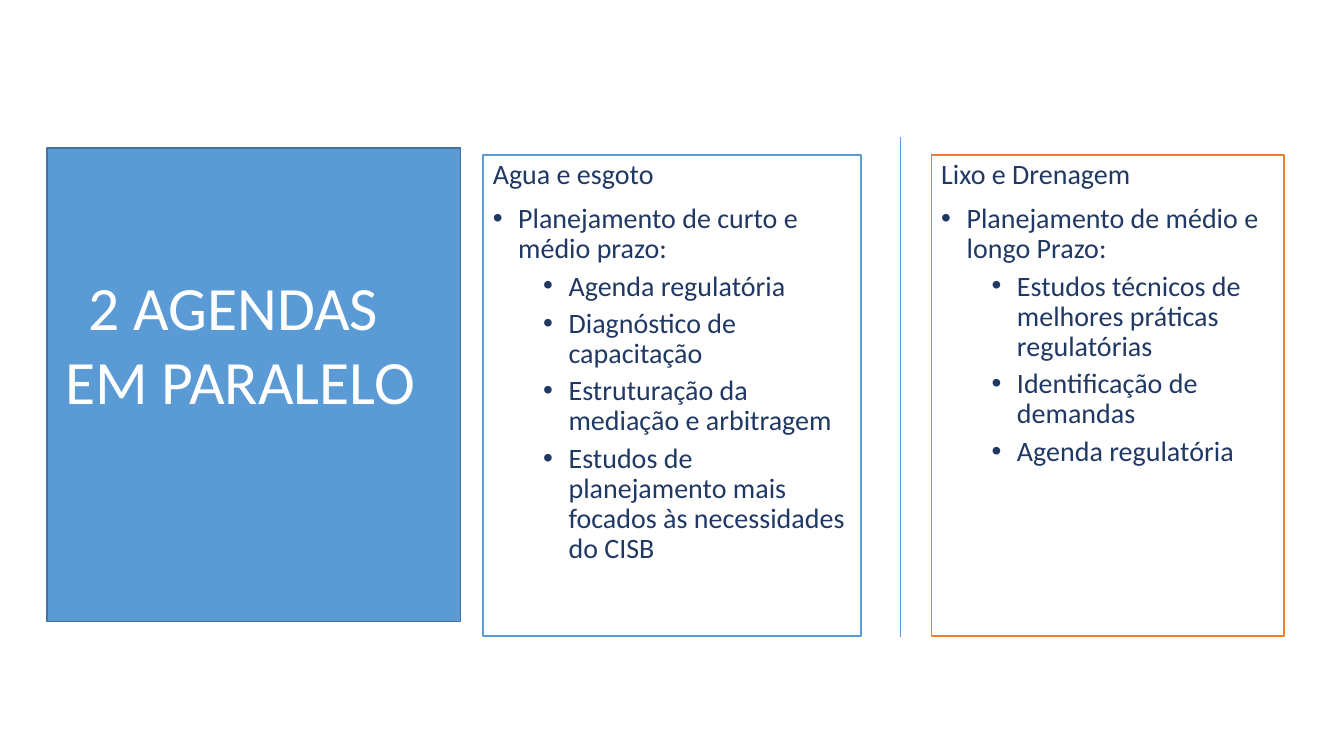
"""Build a slide that sets two parallel agendas side by side."""
from dataclasses import dataclass

from lxml.etree import SubElement
from pptx import Presentation
from pptx.dml.color import RGBColor
from pptx.enum.shapes import MSO_CONNECTOR, MSO_SHAPE
from pptx.enum.text import MSO_ANCHOR, MSO_AUTO_SIZE, PP_ALIGN
from pptx.oxml.ns import qn
from pptx.shapes.autoshape import Shape
from pptx.slide import Slide
from pptx.text.text import _Paragraph as Para
from pptx.util import Cm, Pt

BLUE = RGBColor(0x5B, 0x9B, 0xD5)
EDGE = RGBColor(0x43, 0x73, 0x9E)
NAVY = RGBColor(0x20, 0x38, 0x64)
ORANGE = RGBColor(0xED, 0x7D, 0x31)
WHITE = RGBColor(0xFF, 0xFF, 0xFF)
FONT = "Calibri"
TOP, HEIGHT = 3.91, 12.12


@dataclass(frozen=True)
class Agenda:
    left: float
    width: float
    edge: RGBColor
    head: str
    plan: str
    items: tuple[str, ...]


AGENDAS = (
    Agenda(12.17, 9.53, BLUE, "Agua e esgoto",
           "Planejamento de curto e médio prazo:",
           ("Agenda regulatória",
            "Diagnóstico de capacitação",
            "Estruturação da mediação e arbitragem",
            "Estudos de planejamento mais focados às necessidades do CISB")),
    Agenda(23.47, 8.89, ORANGE, "Lixo e Drenagem",
           "Planejamento de médio e longo Prazo:",
           ("Estudos técnicos de melhores práticas regulatórias",
            "Identificação de demandas",
            "Agenda regulatória")),
)


def style(para: Para, size: int, color: RGBColor) -> None:
    for run in para.runs:
        run.font.name = FONT
        run.font.size = Pt(size)
        run.font.color.rgb = color


def add_box(slide: Slide, left: float, top: float, width: float, height: float,
            fill: RGBColor, edge: RGBColor) -> Shape:
    box = slide.shapes.add_shape(
        MSO_SHAPE.RECTANGLE, Cm(left), Cm(top), Cm(width), Cm(height))
    box.shadow.inherit = False
    box.fill.solid()
    box.fill.fore_color.rgb = fill
    box.line.color.rgb = edge
    box.line.width = Pt(1)
    return box


def add_bullet(para: Para, indent: float) -> None:
    props = para._p.get_or_add_pPr()
    props.set("marL", str(Cm(indent)))
    props.set("indent", str(-Cm(0.64)))
    SubElement(props, qn("a:buFont")).set("typeface", "Arial")
    SubElement(props, qn("a:buChar")).set("char", "•")


def add_agenda(slide: Slide, agenda: Agenda) -> None:
    box = add_box(slide, agenda.left, TOP, agenda.width, HEIGHT, WHITE, agenda.edge)
    frame = box.text_frame
    frame.word_wrap = True
    frame.vertical_anchor = MSO_ANCHOR.TOP
    frame.text = "\n".join((agenda.head, agenda.plan, *agenda.items))
    for rank, para in enumerate(frame.paragraphs):
        if rank > 0:
            add_bullet(para, 0.64 if rank == 1 else 1.91)
            para.level = 0 if rank == 1 else 1
            para.space_before = Pt(10 if rank == 1 else 5)
        para.alignment = PP_ALIGN.LEFT
        para.line_spacing = 0.9
        style(para, 20, NAVY)


def add_title(slide: Slide) -> None:
    box = slide.shapes.add_textbox(Cm(1.35), Cm(6.65), Cm(9.42), Cm(4.01))
    frame = box.text_frame
    frame.word_wrap = False
    frame.auto_size = MSO_AUTO_SIZE.SHAPE_TO_FIT_TEXT
    frame.text = "2 AGENDAS \nEM PARALELO"
    for para in frame.paragraphs:
        para.alignment = PP_ALIGN.CENTER
        style(para, 44, WHITE)


def add_rule(slide: Slide) -> None:
    rule = slide.shapes.add_connector(
        MSO_CONNECTOR.STRAIGHT, Cm(22.68), Cm(3.45), Cm(22.68), Cm(16.05))
    rule.line.color.rgb = BLUE
    rule.line.width = Pt(0.5)
    SubElement(rule._element.spPr, qn("a:effectLst"))


def main() -> None:
    deck = Presentation()
    deck.slide_width, deck.slide_height = Cm(33.87), Cm(19.05)
    slide = deck.slides.add_slide(deck.slide_layouts[6])
    add_box(slide, 1.19, 3.73, 10.41, 11.94, BLUE, EDGE)
    for agenda in AGENDAS:
        add_agenda(slide, agenda)
    add_title(slide)
    add_rule(slide)
    deck.save("out.pptx")


if __name__ == "__main__":
    main()
